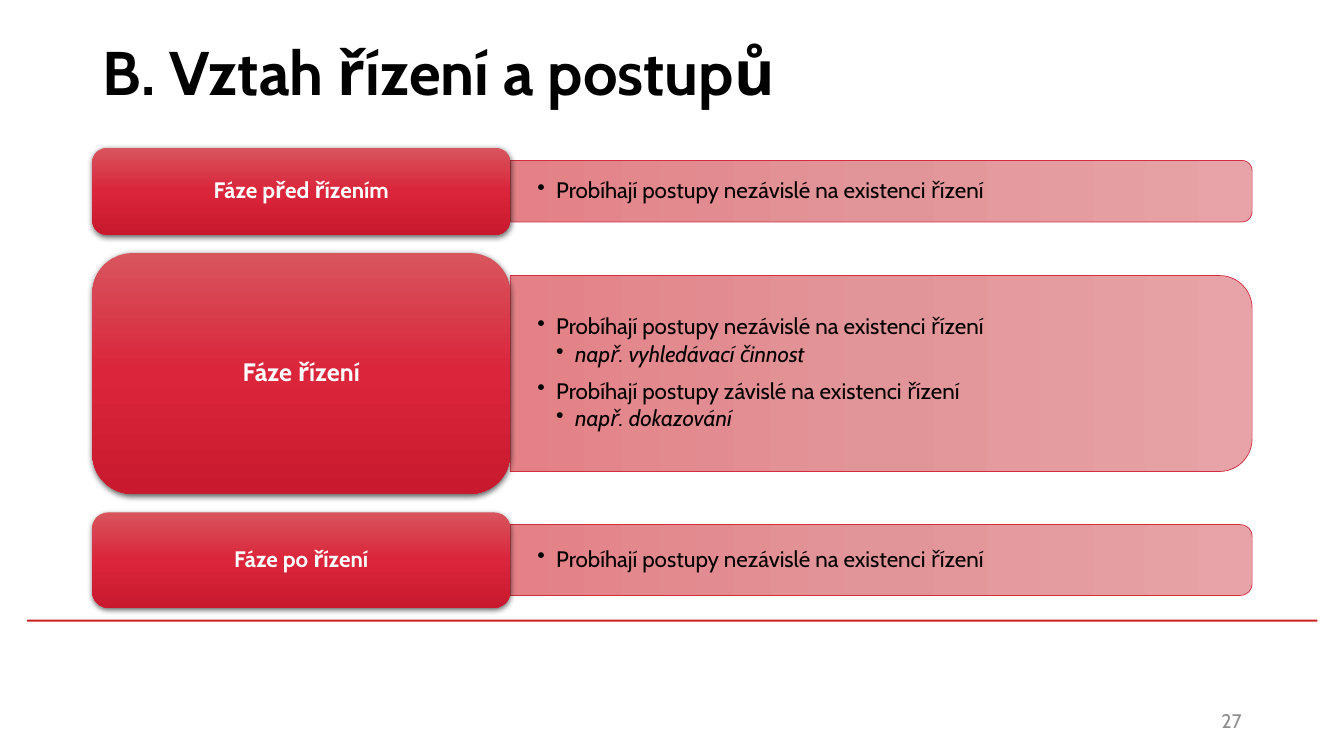
from copy import deepcopy

from lxml import etree
from pptx import Presentation
from pptx import util as u
from pptx.dml.color import RGBColor
from pptx.enum import shapes, text
from pptx.oxml import ns

BLACK = RGBColor(0x00, 0x00, 0x00)
WHITE = RGBColor(0xFF, 0xFF, 0xFF)
GREY = RGBColor(0x8C, 0x8C, 0x8C)
RULE_RED = RGBColor(0xCD, 0x1F, 0x21)
OUTLINE_RED = RGBColor(0xD2, 0x2D, 0x40)
LABEL_REDS = [RGBColor(0xD8, 0x55, 0x5E), RGBColor(0xDA, 0x25, 0x3A), RGBColor(0xC9, 0x19, 0x2E)]
PANEL_PINKS = [RGBColor(0xE7, 0xA3, 0xA7), RGBColor(0xE2, 0x95, 0x99), RGBColor(0xE3, 0x81, 0x86)]

LEFT, LABEL_WIDTH, PANEL_WIDTH = 66, 298.4, 530
FIRST_TOP, GAP = 105.6, 13.2
INDENT = 13.5

INDEPENDENT = "Probíhají postupy nezávislé na existenci řízení"
DEPENDENT = "Probíhají postupy závislé na existenci řízení"
# Label, label size, label height, panel height, bullets as (level, text, space before)
PHASES = [
    ("Fáze před řízením", 16, 62, 44, [(1, INDEPENDENT, 0)]),
    ("Fáze řízení", 18, 172, 140, [
        (1, INDEPENDENT, 0),
        (2, "např. vyhledávací činnost", 2.4),
        (1, DEPENDENT, 9),
        (2, "např. dokazování", 2.4),
    ]),
    ("Fáze po řízení", 16, 68, 50.6, [(1, INDEPENDENT, 0)]),
]


def write(paragraph, words, color, alignment=text.PP_ALIGN.LEFT, **formats):
    paragraph.text = words
    paragraph.alignment = alignment
    paragraph.font.color.rgb = color
    for name, value in {"name": "Cabin", **formats}.items():
        setattr(paragraph.font, name, value)


def fill_gradient(shape, colors):
    shape.fill.gradient()
    shape.fill.gradient_angle = 270
    stop_list = shape._element.spPr.find(".//" + ns.qn("a:gsLst"))
    stop_list.insert(1, deepcopy(stop_list[0]))
    for stop, color, position in zip(shape.fill.gradient_stops, colors, (0, 0.5, 1)):
        stop.color.rgb = color
        stop.position = position


presentation = Presentation()
presentation.slide_width, presentation.slide_height = u.Pt(960), u.Pt(540)
slide = presentation.slides.add_slide(presentation.slide_layouts[5])

# Title
title = slide.shapes.title
title.left, title.top, title.width, title.height = u.Pt(66), u.Pt(1.5), u.Pt(828), u.Pt(104.4)
title.text_frame.vertical_anchor = text.MSO_ANCHOR.MIDDLE
title.text_frame.auto_size = text.MSO_AUTO_SIZE.NONE
write(title.text_frame.paragraphs[0], "B. Vztah řízení a postupů", BLACK, size=u.Pt(44), bold=True)
title.text_frame.paragraphs[0].line_spacing = 0.9

# Red rule above the footer
rule = slide.shapes.add_shape(
    shapes.MSO_SHAPE.RECTANGLE, u.Pt(19.4), u.Pt(442.6), u.Pt(921.6), u.Pt(1.5))
rule.shadow.inherit = False
rule.fill.solid()
rule.fill.fore_color.rgb = RULE_RED
rule.line.fill.background()

# Phases: a panel with bullets beside each label
top = FIRST_TOP
panel_left = LEFT + LABEL_WIDTH
for name, size, label_height, panel_height, bullets in PHASES:
    middle = top + label_height / 2

    # Panel, turned so that its rounded corners face right
    panel = slide.shapes.add_shape(
        shapes.MSO_SHAPE.ROUND_2_SAME_RECTANGLE,
        u.Pt(panel_left + (PANEL_WIDTH - panel_height) / 2), u.Pt(middle - PANEL_WIDTH / 2),
        u.Pt(panel_height), u.Pt(PANEL_WIDTH))
    panel.rotation = 90
    panel.shadow.inherit = False
    fill_gradient(panel, PANEL_PINKS)
    panel.line.color.rgb = OUTLINE_RED
    panel.line.width = u.Pt(0.5)

    # Bullets
    box = slide.shapes.add_textbox(
        u.Pt(panel_left), u.Pt(middle - panel_height / 2), u.Pt(PANEL_WIDTH), u.Pt(panel_height))
    frame = box.text_frame
    frame.word_wrap = True
    frame.vertical_anchor = text.MSO_ANCHOR.MIDDLE
    frame.margin_left = frame.margin_right = u.Pt(19.4)
    frame.margin_top = frame.margin_bottom = u.Pt(10)
    for number, (level, words, space_before) in enumerate(bullets):
        paragraph = frame.add_paragraph() if number else frame.paragraphs[0]
        paragraph.level = level
        paragraph.line_spacing = 0.9
        paragraph.space_before = u.Pt(space_before)
        properties = paragraph._p.get_or_add_pPr()
        properties.set("marL", str(u.Pt(INDENT * level)))
        properties.set("indent", str(u.Pt(-INDENT)))
        etree.SubElement(properties, ns.qn("a:buChar"), char="•")
        write(paragraph, words, BLACK, size=u.Pt(16), italic=level == 2)

    # Label
    label = slide.shapes.add_shape(
        shapes.MSO_SHAPE.ROUNDED_RECTANGLE,
        u.Pt(LEFT), u.Pt(top), u.Pt(LABEL_WIDTH), u.Pt(label_height))
    fill_gradient(label, LABEL_REDS)
    label.line.fill.background()
    label.shadow.inherit = False
    effects = label._element.spPr.find(ns.qn("a:effectLst"))
    shadow = etree.SubElement(
        effects, ns.qn("a:outerShdw"), blurRad=str(u.Pt(4.5)), dist=str(u.Pt(1.5)),
        dir="5400000", algn="ctr", rotWithShape="0")
    shade = etree.SubElement(shadow, ns.qn("a:srgbClr"), val=str(BLACK))
    etree.SubElement(shade, ns.qn("a:alpha"), val="63000")
    label.text_frame.word_wrap = True
    label.text_frame.vertical_anchor = text.MSO_ANCHOR.MIDDLE
    write(label.text_frame.paragraphs[0], name, WHITE, text.PP_ALIGN.CENTER,
          size=u.Pt(size), bold=True)
    label.text_frame.paragraphs[0].line_spacing = 0.9

    top += label_height + GAP

# Slide number
number_box = slide.shapes.add_textbox(u.Pt(678), u.Pt(500.5), u.Pt(216), u.Pt(28.8))
number_box.text_frame.word_wrap = True
number_box.text_frame.vertical_anchor = text.MSO_ANCHOR.MIDDLE
write(number_box.text_frame.paragraphs[0], "27", GREY, text.PP_ALIGN.RIGHT, size=u.Pt(14))

presentation.save("out.pptx")
